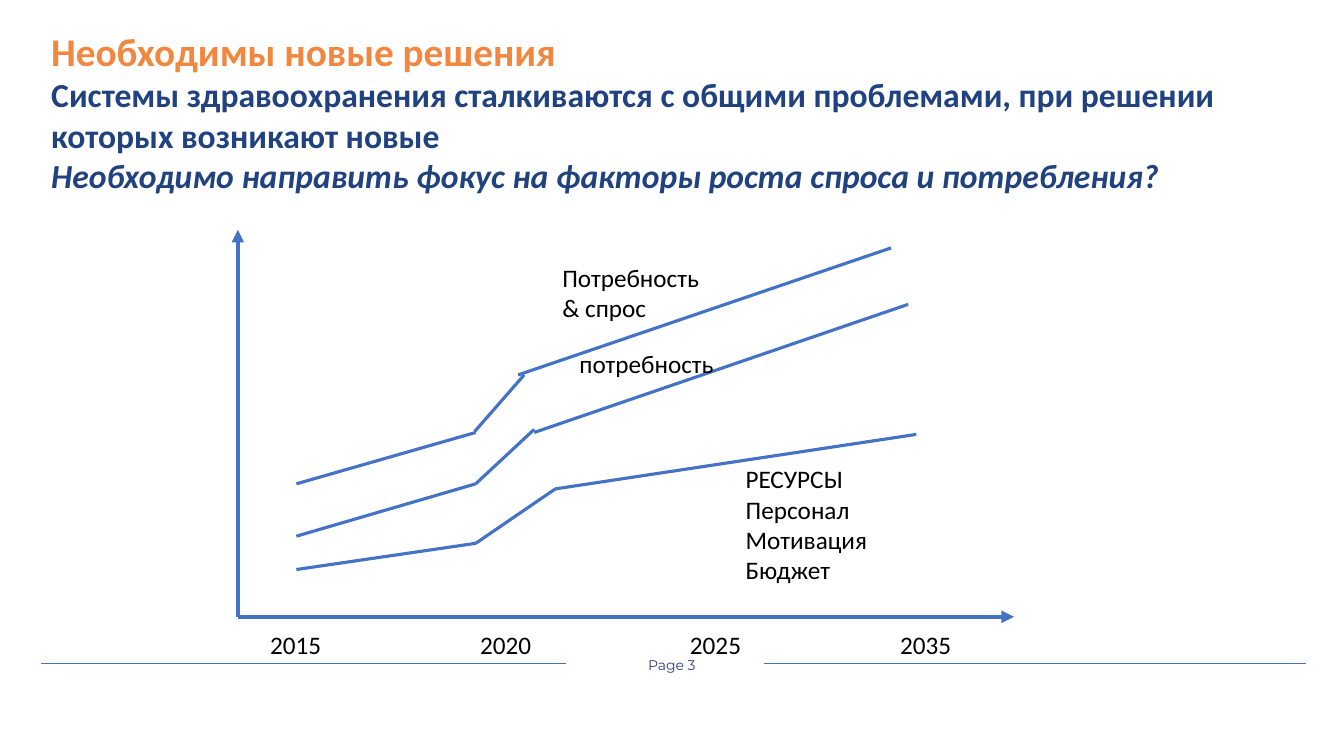
from dataclasses import dataclass

from pptx import Presentation
from pptx.dml.color import RGBColor
from pptx.enum.shapes import MSO_CONNECTOR
from pptx.enum.text import PP_ALIGN
from pptx.oxml.ns import qn
from pptx.oxml.xmlchemy import OxmlElement
from pptx.slide import Slide
from pptx.util import Pt

COLORS = {
    "line": "4472C4",
    "text": "000000",
    "orange": "F28740",
    "navy": "204281",
    "footer": "2F3F7B",
}
YEAR_STEP = 150


@dataclass
class Line:
    x1: float
    y1: float
    x2: float
    y2: float
    width: float = 2.25
    arrow: bool = False


@dataclass
class Para:
    text: str
    size: float = 18
    color: str = "text"
    bold: bool = False
    italic: bool = False
    font: str = "Calibri"
    align: PP_ALIGN = PP_ALIGN.LEFT
    spacing: float = 1.0
    tabs: tuple[int, ...] = ()


@dataclass
class Box:
    x: float
    y: float
    w: float
    h: float
    paras: list[Para]


def add_line(s: Slide, line: Line) -> None:
    c = s.shapes.add_connector(MSO_CONNECTOR.STRAIGHT, Pt(line.x1), Pt(line.y1),
                               Pt(line.x2), Pt(line.y2))
    c.line.color.rgb = RGBColor.from_string(COLORS["line"])
    c.line.width = Pt(line.width)
    sp_pr = c._element.spPr
    if line.arrow:
        tail = OxmlElement("a:tailEnd")
        tail.set("type", "triangle")
        sp_pr.find(qn("a:ln")).append(tail)
    sp_pr.append(OxmlElement("a:effectLst"))


def add_box(s: Slide, box: Box) -> None:
    sp = s.shapes.add_textbox(Pt(box.x), Pt(box.y), Pt(box.w), Pt(box.h))
    tf = sp.text_frame
    tf.word_wrap = True
    for i, para in enumerate(box.paras):
        p = tf.add_paragraph() if i else tf.paragraphs[0]
        p.alignment = para.align
        p.line_spacing = para.spacing
        if para.tabs:
            tab_list = OxmlElement("a:tabLst")
            for pos in para.tabs:
                tab = OxmlElement("a:tab")
                tab.set("pos", str(Pt(pos)))
                tab.set("algn", "l")
                tab_list.append(tab)
            p._p.get_or_add_pPr().append(tab_list)
        r = p.add_run()
        r.text = para.text
        r.font.name = para.font
        r.font.size = Pt(para.size)
        r.font.bold = para.bold
        r.font.italic = para.italic
        r.font.color.rgb = RGBColor.from_string(COLORS[para.color])


# Footer rules and chart axes
FRAME = [
    Line(29.5, 473.8, 404.6, 473.8, width=0.5),
    Line(545.8, 473.8, 933.1, 473.8, width=0.5),
    Line(169.9, 440.6, 724.3, 440.6, width=3, arrow=True),
    Line(169.9, 440.6, 169.9, 164.2, width=3, arrow=True),
]

# Three curves: demand, need, resources
CURVES = [
    Line(211.7, 345.6, 339.8, 308.9),
    Line(339.1, 308.2, 374.4, 267.8),
    Line(370.1, 267.8, 636.5, 177.1),
    Line(211.7, 383, 339.8, 345.6),
    Line(339.8, 345.6, 381.6, 306.7),
    Line(381.6, 308.9, 648.7, 217.4),
    Line(211.7, 406.8, 339.8, 388.1),
    Line(339.8, 388.1, 396.7, 349.2),
    Line(396.7, 349.2, 654.5, 310.3),
]

YEARS = ["2015", "2020", "2025", "2035"]
YEAR_TABS = tuple(YEAR_STEP * i for i in range(1, len(YEARS)))
RESOURCES = ["РЕСУРСЫ", "Персонал", "Мотивация", "Бюджет"]

BOXES = [
    # Page number
    Box(347, 466.6, 265.7, 39.6, [
        Para("Page 3", 10, "footer", font="Montserrat", align=PP_ALIGN.CENTER, spacing=0.9)]),
    # Axis and curve labels
    Box(185.8, 445.7, 523.4, 28.8, [Para("\t".join(YEARS), tabs=YEAR_TABS)]),
    Box(394.6, 183.6, 119.5, 51.1, [Para("Потребность & спрос")]),
    Box(406.8, 245.5, 118.8, 28.8, [Para("потребность")]),
    Box(525.6, 327.6, 105.8, 94.3, [Para(text) for text in RESOURCES]),
    # Heading
    Box(29.5, 15.8, 913.7, 128.2, [
        Para("Необходимы новые решения", 28, "orange", bold=True),
        Para("Системы здравоохранения сталкиваются с общими проблемами, "
             "при решении которых возникают новые", 24, "navy", bold=True),
        Para("Необходимо направить фокус на факторы роста спроса и потребления?",
             24, "navy", bold=True, italic=True),
    ]),
]


def main() -> None:
    prs = Presentation()
    prs.slide_width, prs.slide_height = Pt(960), Pt(540)
    s = prs.slides.add_slide(prs.slide_layouts[6])
    for line in FRAME + CURVES:
        add_line(s, line)
    for box in BOXES:
        add_box(s, box)
    prs.save("out.pptx")


if __name__ == "__main__":
    main()
